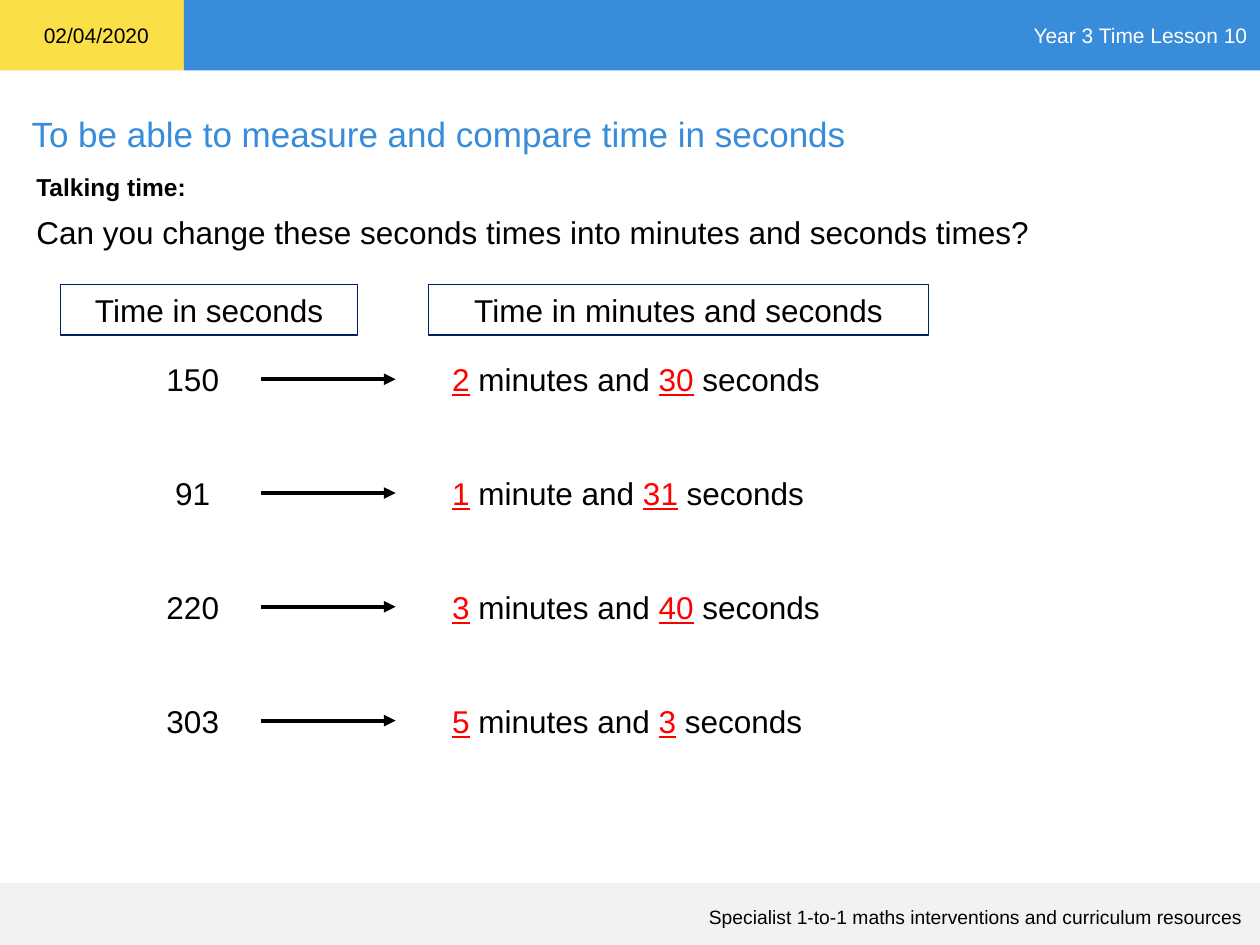
"""Build a maths slide on turning seconds into minutes and seconds."""
from lxml.etree import SubElement
from pptx import Presentation
from pptx.dml.color import RGBColor
from pptx.enum.shapes import MSO_CONNECTOR as Line, MSO_SHAPE as Shape
from pptx.enum.text import MSO_ANCHOR as Anchor, PP_ALIGN as Align
from pptx.oxml.ns import qn
from pptx.util import Inches, Pt

BLACK = RGBColor(0, 0, 0)
WHITE = RGBColor(255, 255, 255)
RED = RGBColor(255, 0, 0)
BLUE = RGBColor(0x38, 0x8C, 0xDA)
NAVY = RGBColor(0, 0x20, 0x60)
YELLOW = RGBColor(0xFA, 0xDF, 0x47)
GREY = RGBColor(0xF2, 0xF2, 0xF2)

COLS, ROWS = 100, 75
TITLE = "To be able to measure and compare time in seconds"
BANDS = [
    ((0, 0, 14.6, 5.6), YELLOW),
    ((14.6, 0, 85.4, 5.6), BLUE),
    ((0, 70.1, 100, 4.9), GREY),
]
LABELS = [
    ("02/04/2020", (2.5, 1.3, 10.4, 3), dict(size=12)),
    ("Year 3 Time Lesson 10", (14.6, 0, 85.4, 5.6),
     dict(size=12, color=WHITE, align=Align.RIGHT)),
    ("Specialist 1-to-1 maths interventions and curriculum resources",
     (4.2, 71.3, 95.4, 3), dict(size=11, align=Align.RIGHT)),
    ("Talking time:", (1.9, 13.1, 14, 3.4), dict(size=14, bold=True)),
    ("Can you change these seconds times into minutes and seconds times?",
     (1.9, 16.4, 96.1, 4), {}),
]
HEADS = [
    ("Time in seconds", (4.8, 22.6, 23.6, 4)),
    ("Time in minutes and seconds", (34, 22.6, 39.7, 4)),
]
TIMES = [
    ("150", "2", " minutes and ", "30"),
    ("91", "1", " minute and ", "31"),
    ("220", "3", " minutes and ", "40"),
    ("303", "5", " minutes and ", "3"),
]
TOP, GAP, TALL = 28.1, 9.03, 4

deck = Presentation()
deck.slide_width, deck.slide_height = Inches(10), Inches(7.5)
slide = deck.slides.add_slide(deck.slide_layouts[5])
shapes = slide.shapes


def grid(*cells):
    """Turn columns and rows into slide lengths."""
    units = deck.slide_width / COLS, deck.slide_height / ROWS
    return [round(n * units[i % 2]) for i, n in enumerate(cells)]


def write(shape, runs, size=18, color=BLACK, bold=False, align=Align.LEFT):
    """Fill a shape with one paragraph of plain or (text, marked) runs."""
    frame = shape.text_frame
    frame.word_wrap = True
    frame.vertical_anchor = Anchor.MIDDLE
    para = frame.paragraphs[0]
    para.alignment = align
    for text, mark in [(runs, False)] if isinstance(runs, str) else runs:
        run = para.add_run()
        run.text = text
        font = run.font
        font.name, font.size, font.bold = "Arial", Pt(size), bold
        font.underline = mark
        font.color.rgb = RED if mark else color


def block(box, fill=None, edge=None):
    """Add a flat rectangle."""
    rect = shapes.add_shape(Shape.RECTANGLE, *grid(*box))
    rect.shadow.inherit = False
    if fill is None:
        rect.fill.background()
    else:
        rect.fill.solid()
        rect.fill.fore_color.rgb = fill
    if edge is None:
        rect.line.fill.background()
    else:
        rect.line.color.rgb = edge
        rect.line.width = Pt(0.75)
    return rect


def arrow(left, right, row):
    """Add a level arrow that points right."""
    link = shapes.add_connector(Line.STRAIGHT, *grid(left, row, right, row))
    link.line.color.rgb = BLACK
    link.line.width = Pt(2.25)
    SubElement(link.line._get_or_add_ln(), qn("a:tailEnd"), type="triangle")
    SubElement(link._element.spPr, qn("a:effectLst"))


for box, fill in BANDS:
    block(box, fill)

title = shapes.title
title.left, title.top, title.width, title.height = grid(1.5, 8.4, 97.1, 4.4)
write(title, TITLE, size=20, color=BLUE)

for text, box, style in LABELS:
    write(shapes.add_textbox(*grid(*box)), text, **style)

for text, box in HEADS:
    write(block(box, edge=NAVY), text, align=Align.CENTER)

for i, (total, mins, join, secs) in enumerate(TIMES):
    row = TOP + i * GAP
    write(shapes.add_textbox(*grid(10.3, row, 10, TALL)), total,
          align=Align.CENTER)
    arrow(20.7, 31.4, row + TALL / 2)
    write(shapes.add_textbox(*grid(34.9, row, 33, TALL)),
          [(mins, True), (join, False), (secs, True), (" seconds", False)])

deck.save("out.pptx")
